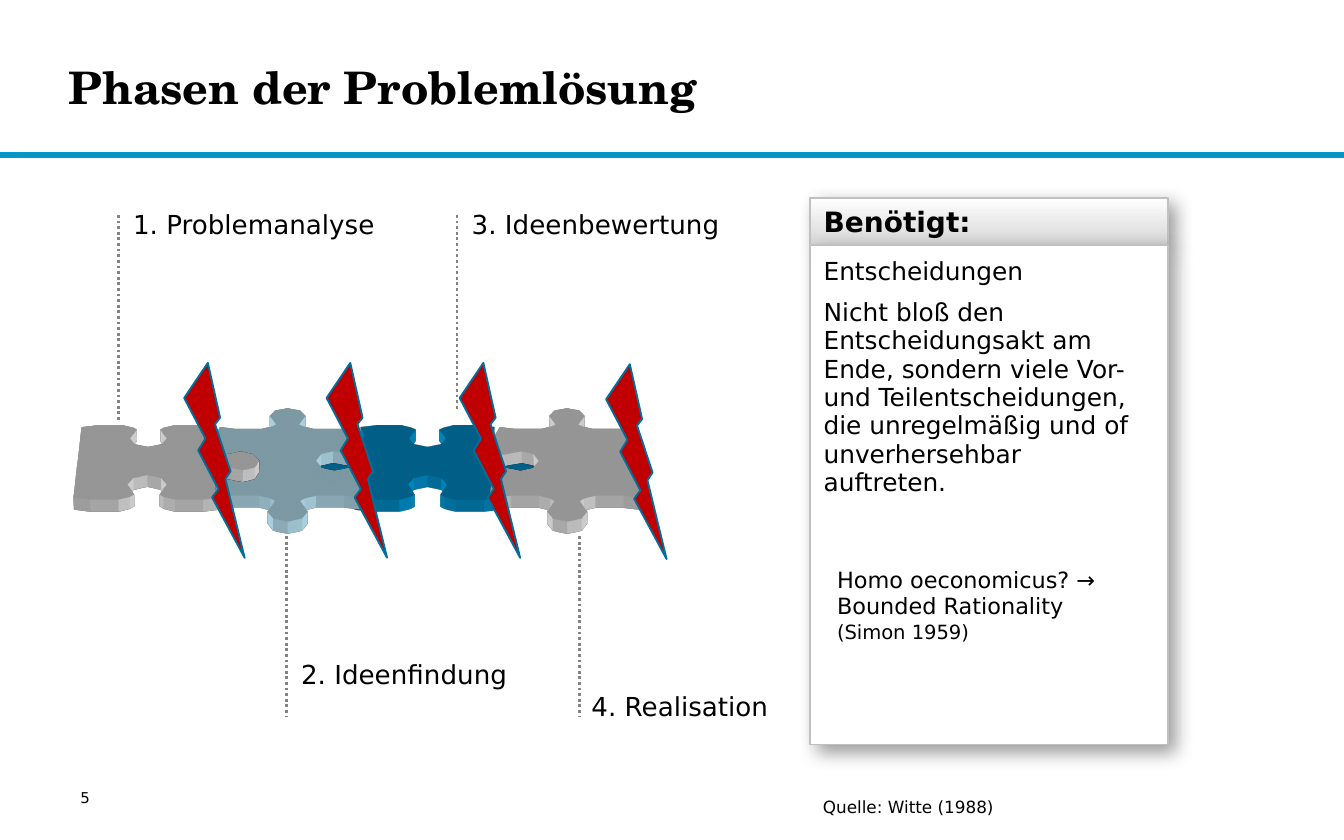
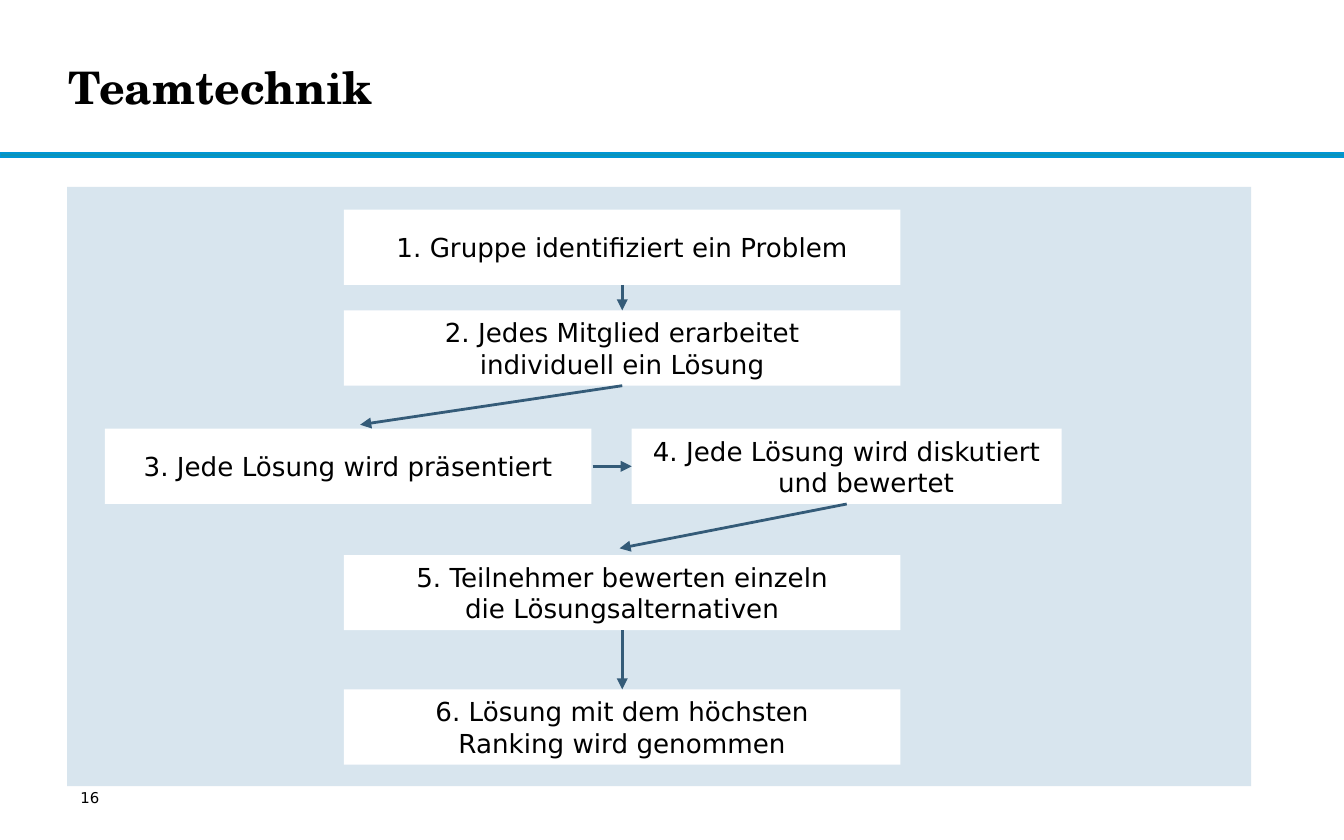
import pptx
import pptx.dml.color
import pptx.enum.dml
import pptx.enum.shapes
import pptx.enum.text
import pptx.oxml
import pptx.oxml.ns
import pptx.util

Pt = pptx.util.Pt
qn = pptx.oxml.ns.qn
XMLNS = pptx.oxml.ns.nsdecls("a")
RECT = pptx.enum.shapes.MSO_SHAPE.RECTANGLE
BOLT = pptx.enum.shapes.MSO_SHAPE.LIGHTNING_BOLT
LINE = pptx.enum.shapes.MSO_CONNECTOR.STRAIGHT
ALIGN = pptx.enum.text.PP_ALIGN
MIDDLE = pptx.enum.text.MSO_ANCHOR.MIDDLE

# Grid of 1000 columns by 625 rows
CELL = pptx.util.Inches(0.01)
WIDE, HIGH = 1000, 625

BLACK, WHITE, GREY = "000000", "FFFFFF", "C0C0C0"
BLUE, PALE, STONE = "0096D3", "C3EEFF", "EAEAEA"
SANS, SERIF = "DejaVu Sans", "TeX Gyre Schola"


def paint(fill, color):
    """Fill a shape, an outline or a font with one solid colour."""
    fill.solid()
    fill.fore_color.rgb = pptx.dml.color.RGBColor.from_string(color)


def write(shape, lines, size, face=SANS, bold=False, align=ALIGN.LEFT):
    frame = shape.text_frame
    frame.word_wrap = True
    frame.text = "\n".join(lines)
    for para in frame.paragraphs:
        para.alignment = align
        para.font.size = Pt(size)
        para.font.name = face
        para.font.bold = bold
        paint(para.font.fill, BLACK)
    return frame


prs = pptx.Presentation()
prs.slide_width, prs.slide_height = WIDE * CELL, HIGH * CELL
layout = prs.slide_layouts[5]

# Shared title, band and page number
slides = []
for name, page in [("Phasen der Problemlösung", "5"), ("Teamtechnik", "16")]:
    slide = prs.slides.add_slide(layout)
    slides.append(slide)
    band = slide.shapes.add_shape(RECT, 0, 114 * CELL, WIDE * CELL, 3 * CELL)
    band.shadow.inherit = False
    paint(band.fill, "0C94B7")
    paint(band.line.fill, BLUE)
    band.line.width = Pt(1)
    title = slide.shapes.title
    title.left, title.top, title.width, title.height = [n * CELL for n in (51, 15, 748, 99)]
    frame = write(title, [name], 24, SERIF, True)
    frame.vertical_anchor = MIDDLE
    frame.margin_left = frame.margin_right = frame.margin_top = frame.margin_bottom = 0
    note = slide.shapes.add_textbox(*[n * CELL for n in (50, 582, 98, 28)])
    write(note, [page], 8)

# Slide 1: phases with dotted leaders
shapes = slides[0].shapes
phases = [
    ("1. Problemanalyse", 88, 160, 313, 91, 147),
    ("2. Ideenfindung", 213, 399, 533, 216, 482),
    ("3. Ideenbewertung", 340, 160, 306, 343, 147),
    ("4. Realisation", 431, 399, 533, 432, 506),
]
for text, col, top, end, left, row in phases:
    lead = shapes.add_connector(LINE, col * CELL, top * CELL, col * CELL, end * CELL)
    paint(lead.line.fill, "868282")
    lead.line.width = Pt(1.5)
    lead.line.dash_style = pptx.enum.dml.MSO_LINE.ROUND_DOT
    lead.element.spPr.append(pptx.oxml.parse_xml(f"<a:effectLst {XMLNS}/>"))
    label = shapes.add_textbox(left * CELL, row * CELL, 208 * CELL, 40 * CELL)
    frame = write(label, [text], 14)
    frame.margin_left = frame.margin_top = frame.margin_bottom = 8 * CELL
    frame.margin_right = 7 * CELL

# Half a jigsaw edge: step from its middle, height of the tab
SIDE = 104
half = [(-52, 0), (-40, -3), (-20, -3), (-12, 1), (-9, 4), (-11, 10), (-14, 18), (-10, 27)]
edge = half + [(0, 31)] + [(-step, rise) for step, rise in half[:0:-1]]

# Tabs point out (1) or in (-1): top, right, bottom, left
pieces = [
    (2, BLUE, (-1, 1, -1, 1)),
    (1, PALE, (1, -1, 1, -1)),
    (3, STONE, (1, 0, 1, -1)),
    (0, STONE, (-1, 1, -1, 0)),
]
for index, color, tabs in pieces:
    corner, way = complex(58 + index * SIDE, 291), 1
    points = []
    for tab in tabs:
        for step, rise in edge if tab else edge[:1]:
            spot = corner + way * complex(SIDE / 2 + step, -tab * rise)
            points.append((spot.real * CELL, spot.imag * CELL))
        corner += way * SIDE
        way *= 1j
    pen = shapes.build_freeform(*points[0], scale=1.0)
    pen.add_line_segments(points[1:], close=True)
    piece = pen.convert_to_shape()
    piece.shadow.inherit = False
    paint(piece.fill, color)
    piece.line.fill.background()
    for xml in (
        f'<a:scene3d {XMLNS}><a:camera prst="legacyPerspectiveFront">'
        '<a:rot lat="18000000" lon="0" rev="0"/></a:camera>'
        '<a:lightRig rig="legacyFlat3" dir="b"/></a:scene3d>',
        f'<a:sp3d {XMLNS} extrusionH="{10 * CELL}" prstMaterial="legacyMatte"/>',
    ):
        piece.element.spPr.append(pptx.oxml.parse_xml(xml))

# Card with heading
needs = [
    "Entscheidungen",
    "Nicht bloß den Entscheidungsakt am Ende, sondern viele Vor- und "
    "Teilentscheidungen, die unregelmäßig und of unverhersehbar auftreten.",
]
cards = []
for top, high, lines, size, bold in [(147, 35, ["Benötigt:"], 15, True), (182, 372, needs, 13.3, False)]:
    card = shapes.add_shape(RECT, 603 * CELL, top * CELL, 266 * CELL, high * CELL)
    cards.append(card)
    paint(card.fill, WHITE)
    paint(card.line.fill, GREY)
    card.line.width = Pt(1)
    card.shadow.inherit = False
    card.element.spPr.find(qn("a:effectLst")).append(pptx.oxml.parse_xml(
        f'<a:outerShdw {XMLNS} blurRad="{Pt(10)}" dist="{Pt(5)}" dir="2700000" algn="tl" rotWithShape="0">'
        '<a:srgbClr val="000000"><a:alpha val="40000"/></a:srgbClr></a:outerShdw>'))
    frame = write(card, lines, size, bold=bold)
    frame.margin_left = frame.margin_right = 10 * CELL
    frame.margin_top = frame.margin_bottom = 7 * CELL

head, body = cards
head.text_frame.vertical_anchor = MIDDLE
head.fill.gradient()
head.fill.gradient_angle = 270
for stop, place, color in zip(head.fill.gradient_stops, (0, 1), (WHITE, "D7D7D7")):
    stop.position = place
    stop.color.rgb = pptx.dml.color.RGBColor.from_string(color)
frame = body.text_frame
frame.vertical_anchor = pptx.enum.text.MSO_ANCHOR.TOP
frame.margin_top, frame.margin_right = 10 * CELL, 13 * CELL
for para in frame.paragraphs:
    para.line_spacing = 0.95
    para.space_after = Pt(6.7)

for left, top in [(137, 270), (243, 270), (342, 270), (451, 271)]:
    bolt = shapes.add_shape(BOLT, left * CELL, top * CELL, 45 * CELL, 145 * CELL)
    bolt.shadow.inherit = False
    paint(bolt.fill, "C00000")
    paint(bolt.line.fill, "006F9C")
    bolt.line.width = Pt(1)

note = shapes.add_textbox(*[n * CELL for n in (613, 416, 223, 69)])
frame = write(note, ["Homo oeconomicus? →", "Bounded Rationality "], 12)
cite = frame.paragraphs[1].add_run()
cite.text = "(Simon 1959)"
cite.font.size = Pt(10.5)
note = shapes.add_textbox(*[n * CELL for n in (585, 588, 164, 25)])
write(note, ["Quelle: Witte (1988)"], 9, align=ALIGN.RIGHT)

# Slide 2: flow of steps
shapes = slides[1].shapes
panel = shapes.add_shape(RECT, *[n * CELL for n in (50, 139, 881, 446)])
panel.shadow.inherit = False
paint(panel.fill, "D8E5EE")
panel.line.fill.background()

MID, TALL = (256, 414), 56
steps = [
    (MID, 156, ["1. Gruppe identifiziert ein Problem"]),
    (MID, 231, ["2. Jedes Mitglied erarbeitet", "individuell ein Lösung"]),
    ((78, 362), 319, ["3. Jede Lösung wird präsentiert"]),
    ((470, 320), 319, ["4. Jede Lösung wird diskutiert\vund bewertet"]),
    (MID, 413, ["5. Teilnehmer bewerten einzeln", "die Lösungsalternativen"]),
    (MID, 513, ["6. Lösung mit dem höchsten", "Ranking wird genommen"]),
]
for (left, wide), top, lines in steps:
    box = shapes.add_shape(RECT, left * CELL, top * CELL, wide * CELL, TALL * CELL)
    box.shadow.inherit = False
    paint(box.fill, WHITE)
    box.line.fill.background()
    frame = write(box, lines, 14, align=ALIGN.CENTER)
    frame.vertical_anchor = MIDDLE
    frame.word_wrap = False
    if "\v" in lines[0]:
        props = frame.paragraphs[0]._p.get_or_add_pPr()
        props.set("marL", str(29 * CELL))
        props.set("indent", str(-29 * CELL))

arrows = [
    (463, 212, 463, 231),
    (463, 287, 268, 316),
    (441, 347, 470, 347),
    (630, 375, 461, 408),
    (463, 469, 463, 513),
]
for ends in arrows:
    arrow = shapes.add_connector(LINE, *[n * CELL for n in ends])
    paint(arrow.line.fill, "345B78")
    arrow.line.width = Pt(1.5)
    props = arrow.element.spPr
    props.find(qn("a:ln")).append(pptx.oxml.parse_xml(f'<a:tailEnd {XMLNS} type="triangle"/>'))
    props.append(pptx.oxml.parse_xml(f"<a:effectLst {XMLNS}/>"))

prs.save("out.pptx")
